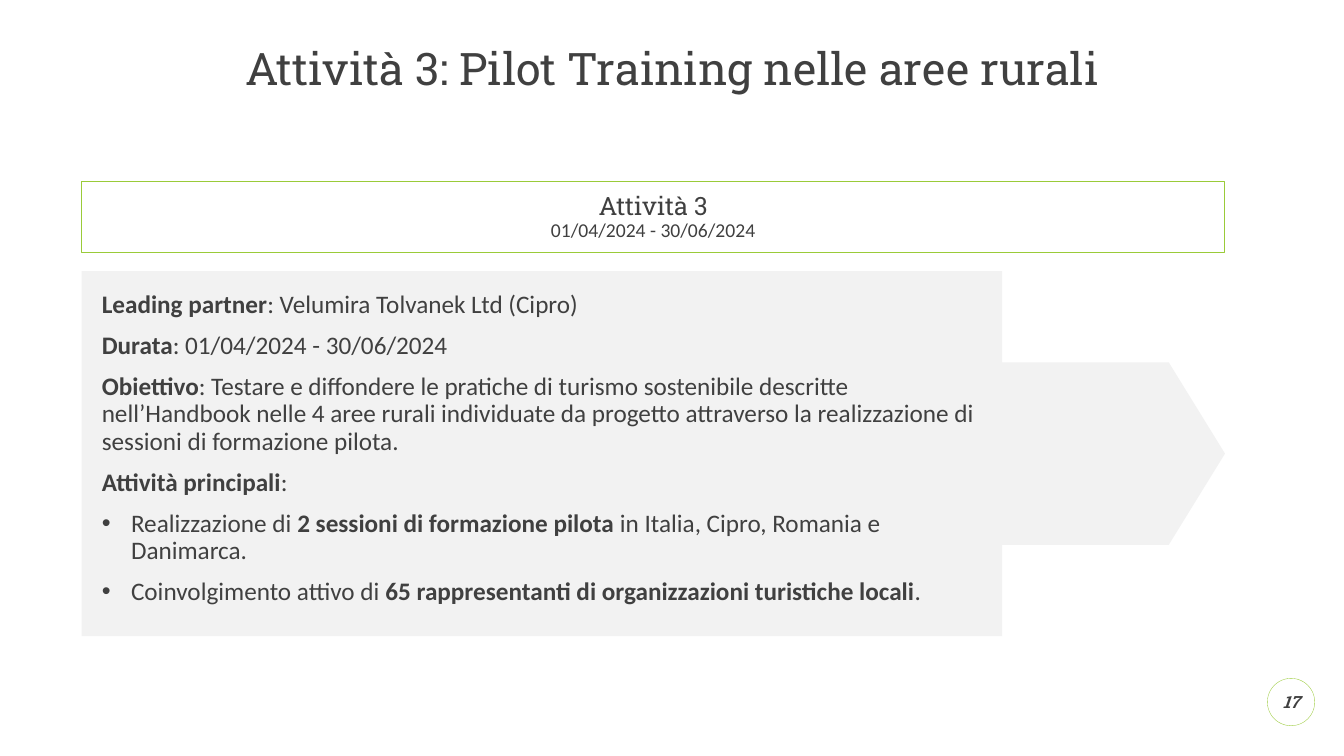
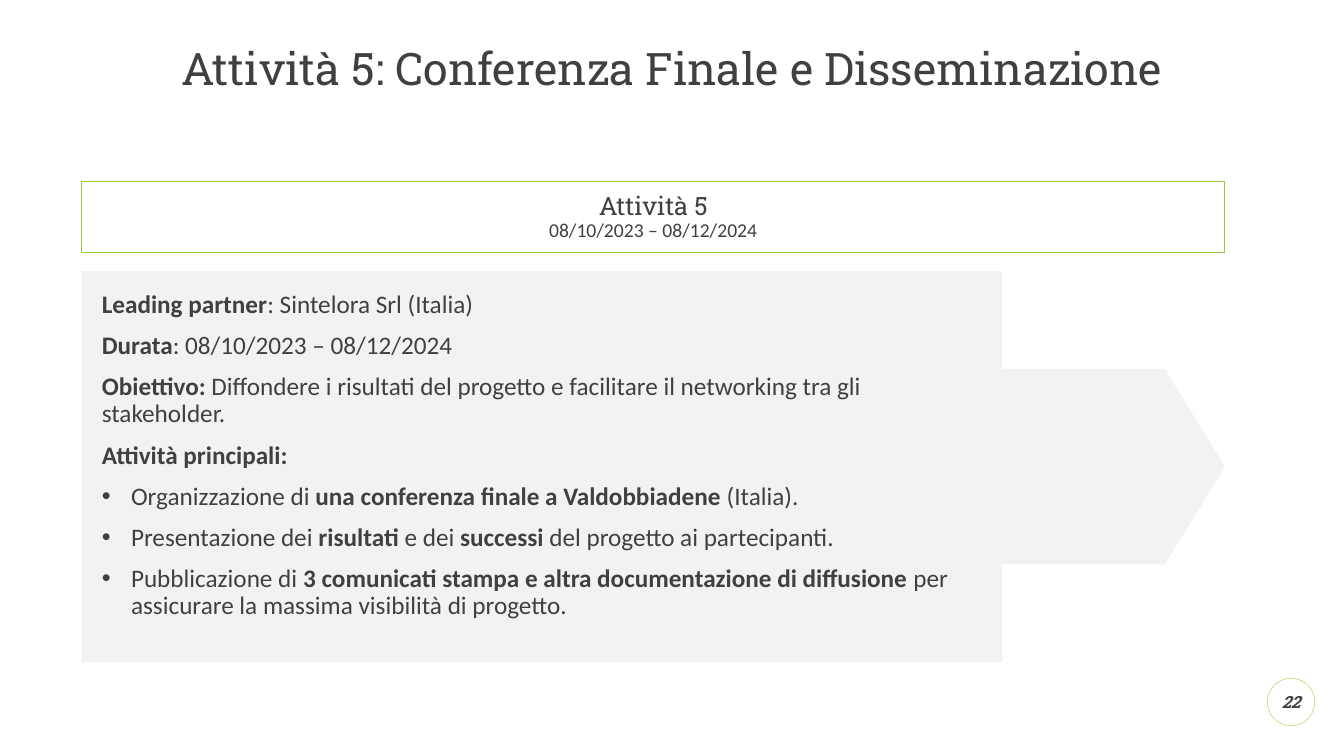
from pptx import Presentation
from pptx.dml.color import RGBColor
from pptx.enum.shapes import MSO_SHAPE as SHAPE
from pptx.enum.text import MSO_ANCHOR as ANCHOR, PP_ALIGN as ALIGN
from pptx.util import Inches, Pt
from lxml.etree import SubElement
from pptx.oxml.ns import qn

# Shared style
DARK = RGBColor(0x40, 0x40, 0x40)
GREEN = RGBColor(0x9A, 0xCB, 0x39)
GRAY = RGBColor(0xF2, 0xF2, 0xF2)
HEAD_FONT, BODY_FONT = "Roboto Slab", "Calibri"

# Boxes: left, top, width, height in inches
TITLE_BOX = (0.47, 0.47, 12.4, 0.47)
BAND_BOX = (0.81, 1.8, 11.34, 0.71)
CALLOUT_LEFT, CALLOUT_TOP, CALLOUT_WIDTH = 0.81, 2.69, 11.34
NUMBER_BOX = (12.57, 6.73, 0.47, 0.47)

# Slide content: ** switches bold on and off, "- " starts a bullet
ACTIVITIES = [
    dict(
        name="Attività 3", title="Pilot Training nelle aree rurali",
        dates="01/04/2024 - 30/06/2024", number="17", height=3.62,
        body=[
            "**Leading partner**: Velumira Tolvanek Ltd (Cipro)",
            "**Durata**: 01/04/2024 - 30/06/2024",
            "**Obiettivo**: Testare e diffondere le pratiche di turismo "
            "sostenibile descritte nell’Handbook nelle 4 aree rurali "
            "individuate da progetto attraverso la realizzazione di sessioni "
            "di formazione pilota.",
            "**Attività principali**:",
            "- Realizzazione di **2 sessioni di formazione pilota **in Italia, "
            "Cipro, Romania e Danimarca.",
            "- Coinvolgimento attivo di **65 rappresentanti di organizzazioni "
            "turistiche locali**.",
        ],
    ),
    dict(
        name="Attività 5", title="Conferenza Finale e Disseminazione",
        dates="08/10/2023 – 08/12/2024", number="22", height=3.88,
        body=[
            "**Leading partner**: Sintelora Srl (Italia)",
            "**Durata**: 08/10/2023 – 08/12/2024",
            "**Obiettivo: **Diffondere i risultati del progetto e facilitare "
            "il networking tra gli stakeholder.",
            "**Attività principali:**",
            "- Organizzazione di **una conferenza finale a Valdobbiadene "
            "**(Italia).",
            "- Presentazione dei **risultati **e dei **successi **del progetto "
            "ai partecipanti.",
            "- Pubblicazione di **3 comunicati stampa e altra documentazione "
            "di diffusione **per assicurare la massima visibilità di progetto.",
        ],
    ),
]


def set_frame(tf, anchor, insets=(0, 0, 0, 0)):
    tf.word_wrap = True
    tf.vertical_anchor = anchor
    (tf.margin_left, tf.margin_top,
     tf.margin_right, tf.margin_bottom) = map(Inches, insets)


def add_shape(s, kind, box, fill=None, line=None, width=0.75):
    sp = s.shapes.add_shape(kind, *map(Inches, box))
    sp.shadow.inherit = False
    if fill is None:
        sp.fill.background()
    else:
        sp.fill.solid()
        sp.fill.fore_color.rgb = fill
    if line is None:
        sp.line.fill.background()
    else:
        sp.line.color.rgb = line
        sp.line.width = Pt(width)
    return sp


def style_paragraph(p, align=ALIGN.LEFT, before=10):
    p.alignment = align
    p.line_spacing = 0.9
    p.space_before = Pt(before)


def add_run(p, text, size, font=BODY_FONT, bold=False, italic=False):
    r = p.add_run()
    r.text = text
    r.font.size, r.font.name = Pt(size), font
    r.font.bold, r.font.italic = bold, italic
    r.font.color.rgb = DARK


def set_bullet(p):
    pPr = p._p.get_or_add_pPr()
    pPr.set("marL", str(Inches(0.29)))
    pPr.set("indent", str(-Inches(0.29)))
    SubElement(pPr, qn("a:buFont")).set("typeface", "Arial")
    SubElement(pPr, qn("a:buChar")).set("char", "•")


def add_title(s, box, text):
    tf = s.shapes.add_textbox(*map(Inches, box)).text_frame
    set_frame(tf, ANCHOR.MIDDLE)
    p = tf.paragraphs[0]
    style_paragraph(p, ALIGN.CENTER, 0)
    add_run(p, text, 32, HEAD_FONT)


def add_band(s, box, name, dates):
    tf = add_shape(s, SHAPE.RECTANGLE, box, line=GREEN).text_frame
    set_frame(tf, ANCHOR.TOP, (0, 0.12, 0, 0))
    p = tf.paragraphs[0]
    style_paragraph(p, ALIGN.CENTER)
    add_run(p, name, 18, HEAD_FONT)
    p.add_line_break()
    add_run(p, dates, 14)


def add_callout(s, box, body):
    sp = add_shape(s, SHAPE.RIGHT_ARROW_CALLOUT, box, fill=GRAY)
    for i, value in enumerate((0.5, 0.25, 0.154, 0.805)):
        sp.adjustments[i] = value
    tf = sp.text_frame
    set_frame(tf, ANCHOR.TOP, (0.2, 0.2, 0.2, 0))
    for i, text in enumerate(body):
        p = tf.add_paragraph() if i else tf.paragraphs[0]
        style_paragraph(p)
        if text.startswith("- "):
            set_bullet(p)
        for j, part in enumerate(text.removeprefix("- ").split("**")):
            if part:
                add_run(p, part, 18, bold=j % 2 == 1)


def add_number(s, box, number):
    tf = add_shape(s, SHAPE.OVAL, box, line=GREEN, width=0.25).text_frame
    set_frame(tf, ANCHOR.MIDDLE)
    p = tf.paragraphs[0]
    p.alignment = ALIGN.CENTER
    add_run(p, number, 12, HEAD_FONT, bold=True, italic=True)


def add_activity_slide(prs, name, title, dates, number, height, body):
    s = prs.slides.add_slide(prs.slide_layouts[6])
    add_title(s, TITLE_BOX, f"{name}: {title}")
    add_band(s, BAND_BOX, name, dates)
    add_callout(s, (CALLOUT_LEFT, CALLOUT_TOP, CALLOUT_WIDTH, height), body)
    add_number(s, NUMBER_BOX, number)


def main():
    prs = Presentation()
    prs.slide_width, prs.slide_height = Inches(13.33), Inches(7.5)
    for activity in ACTIVITIES:
        add_activity_slide(prs, **activity)
    prs.save("out.pptx")


if __name__ == "__main__":
    main()
